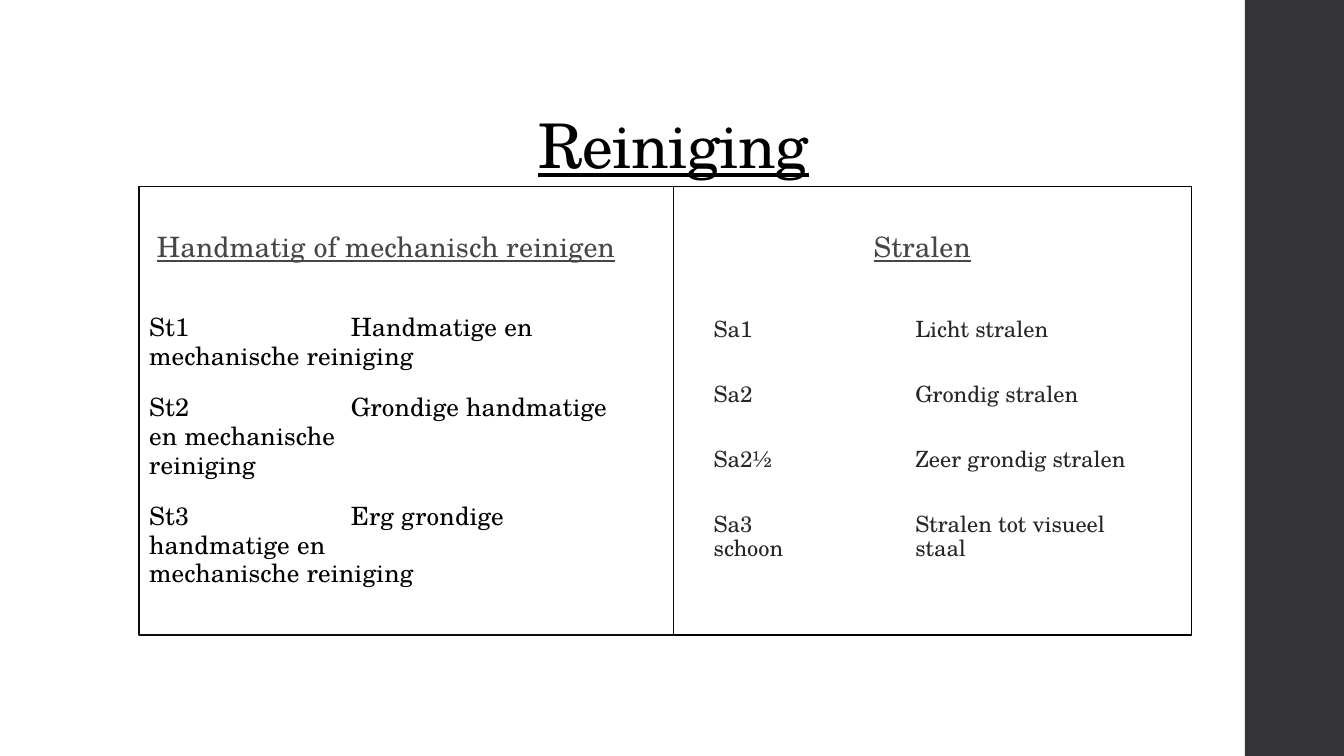
from dataclasses import dataclass

from lxml.etree import SubElement
from pptx import Presentation
from pptx.dml.color import RGBColor
from pptx.enum.shapes import MSO_SHAPE
from pptx.enum.text import MSO_ANCHOR, PP_ALIGN
from pptx.oxml.ns import qn
from pptx.util import Pt


@dataclass(frozen=True)
class Theme:
    font: str = "TeX Gyre Schola"
    black: str = "000000"
    soft_black: str = "0D0D0D"
    sidebar: str = "353537"
    heading: str = "46464A"
    blast_text: str = "262626"
    title_size: float = 44
    heading_size: float = 20
    manual_size: float = 18
    blast_size: float = 16
    border: float = 1.1


class SlideBuilder:
    """Draws styled elements on one slide, with all lengths in points."""

    def __init__(self, slide, theme):
        self.slide = slide
        self.theme = theme

    def rectangle(self, left, top, width, height, fill=None, line=None):
        shape = self.slide.shapes.add_shape(
            MSO_SHAPE.RECTANGLE, Pt(left), Pt(top), Pt(width), Pt(height))
        shape.shadow.inherit = False
        if fill:
            shape.fill.solid()
            shape.fill.fore_color.rgb = RGBColor.from_string(fill)
        else:
            shape.fill.background()
        if line:
            shape.line.color.rgb = RGBColor.from_string(line)
            shape.line.width = Pt(self.theme.border)
        else:
            shape.line.fill.background()

    def text_frame(self, left, top, width, height):
        box = self.slide.shapes.add_textbox(Pt(left), Pt(top), Pt(width), Pt(height))
        box.text_frame.word_wrap = True
        return box.text_frame

    def style(self, paragraph, size, color, line_spacing, tracking=0, underline=False):
        paragraph.line_spacing = line_spacing
        for run in paragraph.runs:
            run.font.name = self.theme.font
            run.font.size = Pt(size)
            run.font.color.rgb = RGBColor.from_string(color)
            run.font.underline = underline
            if tracking:
                run.font._element.set("spc", str(round(tracking * 100)))

    def heading(self, text, left, top, width, height, size, color, line_spacing, tracking):
        frame = self.text_frame(left, top, width, height)
        frame.vertical_anchor = MSO_ANCHOR.BOTTOM
        frame.text = text
        paragraph = frame.paragraphs[0]
        paragraph.alignment = PP_ALIGN.CENTER
        self.style(paragraph, size, color, line_spacing, tracking, underline=True)

    def grades(self, entries, left, top, width, height, size, color,
               line_spacing, gap, tracking=0):
        frame = self.text_frame(left, top, width, height)
        frame.margin_left = frame.margin_top = frame.margin_bottom = 0
        frame.text = "\n".join(entries)
        for paragraph in frame.paragraphs:
            self.style(paragraph, size, color, line_spacing, tracking)
            paragraph.space_after = Pt(gap)
            properties = paragraph._p.get_or_add_pPr()
            tab_list = SubElement(properties, qn("a:tabLst"))
            SubElement(tab_list, qn("a:tab"), pos=str(Pt(144)), algn="l")


def main():
    presentation = Presentation()
    presentation.slide_width, presentation.slide_height = Pt(960), Pt(540)
    slide = presentation.slides.add_slide(presentation.slide_layouts[6])
    theme = Theme()
    builder = SlideBuilder(slide, theme)

    left, middle, right = 99.4, 481, 851
    top, bottom = 133.2, 453.6
    builder.rectangle(889.2, 0, 70.8, 540, fill=theme.sidebar)
    builder.rectangle(middle, top, right - middle, bottom - top, line=theme.black)
    builder.rectangle(left, top, middle - left, bottom - top, line=theme.soft_black)

    builder.heading("Reiniging", left, 28.8, 763.2, 104.4,
                    theme.title_size, theme.black, 0.9, -0.5)
    for text, column in (("Handmatig of mechanisch reinigen", left),
                         ("Stralen", middle + 1.4)):
        builder.heading(text, column, 134.6, 352.8, 57.6,
                        theme.heading_size, theme.heading, 0.95, 0.1)

    builder.grades(
        ["St1\tHandmatige en\vmechanische reiniging",
         "St2\tGrondige handmatige\ven mechanische\vreiniging",
         "St3\tErg grondige\vhandmatige en\vmechanische reiniging"],
        left + 7.2, 224.2, 345.6, 220, theme.manual_size, theme.black, 0.95, 16, 0.1)
    builder.grades(
        ["Sa1\tLicht stralen",
         "Sa2\tGrondig stralen",
         "Sa2½\tZeer grondig stralen",
         "Sa3\tStralen tot visueel\vschoon\tstaal"],
        middle + 28.8, 227, 324, 200, theme.blast_size, theme.blast_text, 0.9, 29.3)

    presentation.save("out.pptx")


if __name__ == "__main__":
    main()
